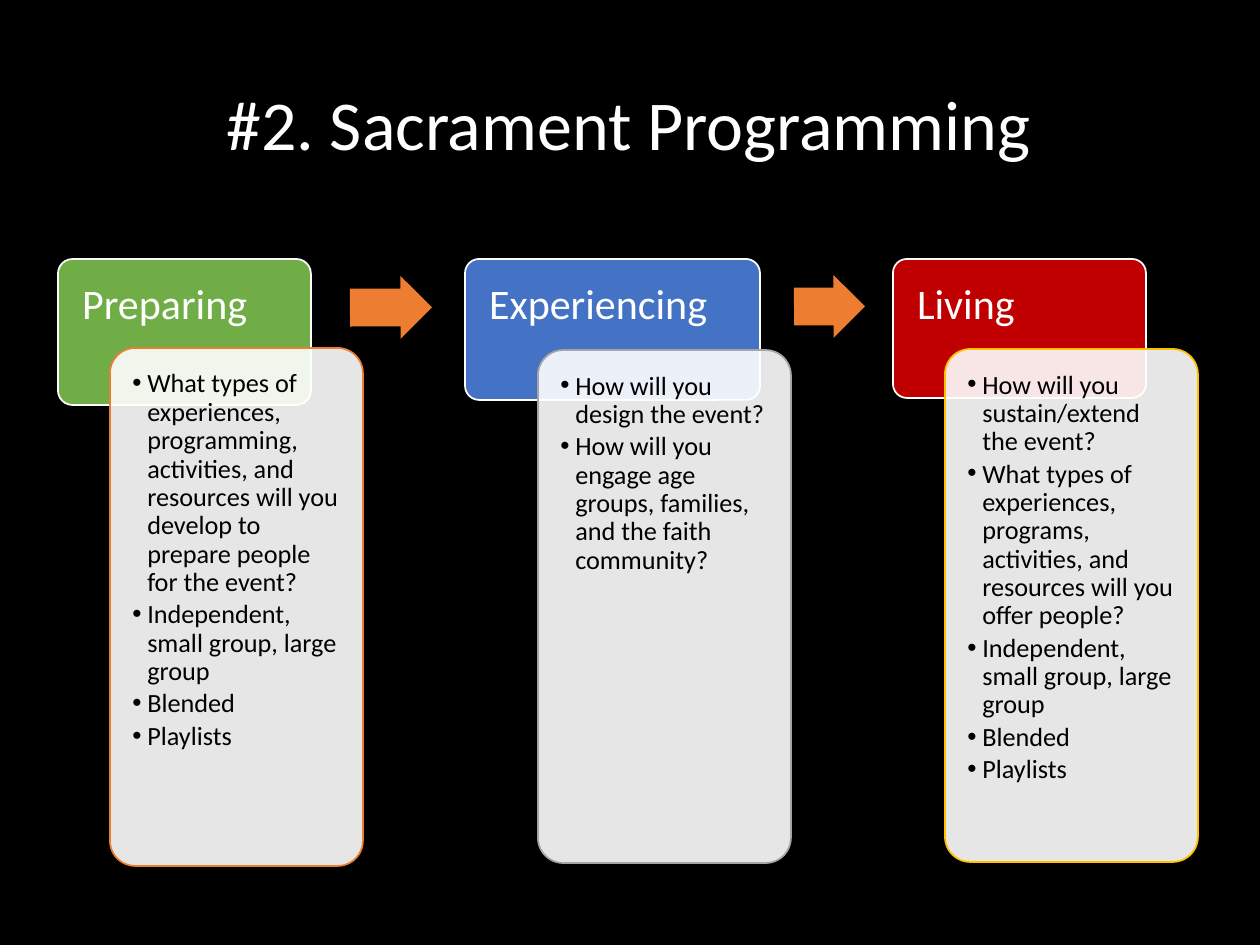
from lxml import etree
from pptx import Presentation, util as u
from pptx.dml.color import RGBColor
from pptx.enum import shapes, text
from pptx.oxml.ns import qn

PX = 914400 / 126
WHITE, BLACK, ORANGE = "FFFFFF", "000000", "ED7D31"


def px(*lengths):
    """Turn lengths in px into EMU."""
    return [u.Emu(round(length * PX)) for length in lengths]


def write(shape, lines, size, color, align=text.PP_ALIGN.LEFT,
          anchor=text.MSO_ANCHOR.TOP, inset=15, after=0, bullets=False):
    frame = shape.text_frame
    frame.word_wrap = True
    frame.auto_size = text.MSO_AUTO_SIZE.NONE
    frame.vertical_anchor = anchor
    frame.margin_left, frame.margin_top, frame.margin_right, frame.margin_bottom = px(*[inset] * 4)
    frame.text = "\n".join(lines)
    for line in frame.paragraphs:
        line.alignment = align
        line.line_spacing = 0.9
        line.space_before, line.space_after = u.Pt(0), u.Pt(after)
        line.font.name, line.font.size = "Calibri", u.Pt(size)
        line.font.color.rgb = RGBColor.from_string(color)
        if bullets:
            props = line._p.get_or_add_pPr()
            props.set("marL", str(px(15)[0]))
            props.set("indent", str(px(-15)[0]))
            bullet_font = etree.Element(qn("a:buFont"), typeface="Arial")
            bullet = etree.Element(qn("a:buChar"), char="•")
            props.find(qn("a:spcAft")).addnext(bullet_font)
            bullet_font.addnext(bullet)


prs = Presentation()
prs.slide_width, prs.slide_height = px(1260, 945)
slide = prs.slides.add_slide(prs.slide_layouts[5])
slide.background.fill.solid()
slide.background.fill.fore_color.rgb = RGBColor.from_string(BLACK)

title = slide.shapes.title
title.left, title.top, title.width, title.height = px(57, 74, 1143, 98)
title.fill.solid()
title.fill.fore_color.rgb = RGBColor.from_string(BLACK)
write(title, ["#2. Sacrament Programming"], 40, WHITE, text.PP_ALIGN.CENTER,
      text.MSO_ANCHOR.BOTTOM, inset=6)

# heading, its box and colour, card box and outline, questions
stages = [
    ("Preparing", (58, 259, 253, 146), "70AD47", (110, 348, 253, 518), ORANGE, [
        "What types of experiences, programming, activities, and resources will you "
        "develop to prepare people for the event?",
        "Independent, small group, large group", "Blended", "Playlists"]),
    ("Experiencing", (465, 259, 295, 141), "4472C4", (538, 350, 253, 513), "A5A5A5", [
        "How will you design the event?",
        "How will you engage age groups, families, and the faith community?"]),
    ("Living", (893, 259, 253, 139), "C00000", (945, 349, 253, 513), "FFC000", [
        "How will you sustain/extend the event?",
        "What types of experiences, programs, activities, and resources will you offer people?",
        "Independent, small group, large group", "Blended", "Playlists"]),
]
for heading, heading_box, heading_color, card_box, card_line, questions in stages:
    for box, fill, outline in ((heading_box, heading_color, WHITE), (card_box, WHITE, card_line)):
        panel = slide.shapes.add_shape(shapes.MSO_SHAPE.ROUNDED_RECTANGLE, *px(*box))
        panel.adjustments[0] = 0.1
        panel.shadow.inherit = False
        panel.fill.solid()
        panel.fill.fore_color.rgb = RGBColor.from_string(fill)
        panel.line.color.rgb = RGBColor.from_string(outline)
        panel.line.width = u.Pt(1)
        if box is heading_box:
            write(panel, [heading], 24, WHITE, inset=20)
        else:
            write(panel, questions, 15, BLACK, after=2.25, bullets=True)
            card_color = panel.fill._xPr.find(qn("a:solidFill"))[0]
            etree.SubElement(card_color, qn("a:alpha"), val="90000")

for arrow_box, turn in (((350, 276, 82, 63), 359.8), ((794, 275, 71, 63), 359.9)):
    arrow = slide.shapes.add_shape(shapes.MSO_SHAPE.RIGHT_ARROW, *px(*arrow_box))
    arrow.adjustments[0], arrow.adjustments[1] = 0.6, 0.5
    arrow.rotation = turn
    arrow.shadow.inherit = False
    arrow.fill.solid()
    arrow.fill.fore_color.rgb = RGBColor.from_string(ORANGE)
    arrow.line.fill.background()

prs.save("out.pptx")
